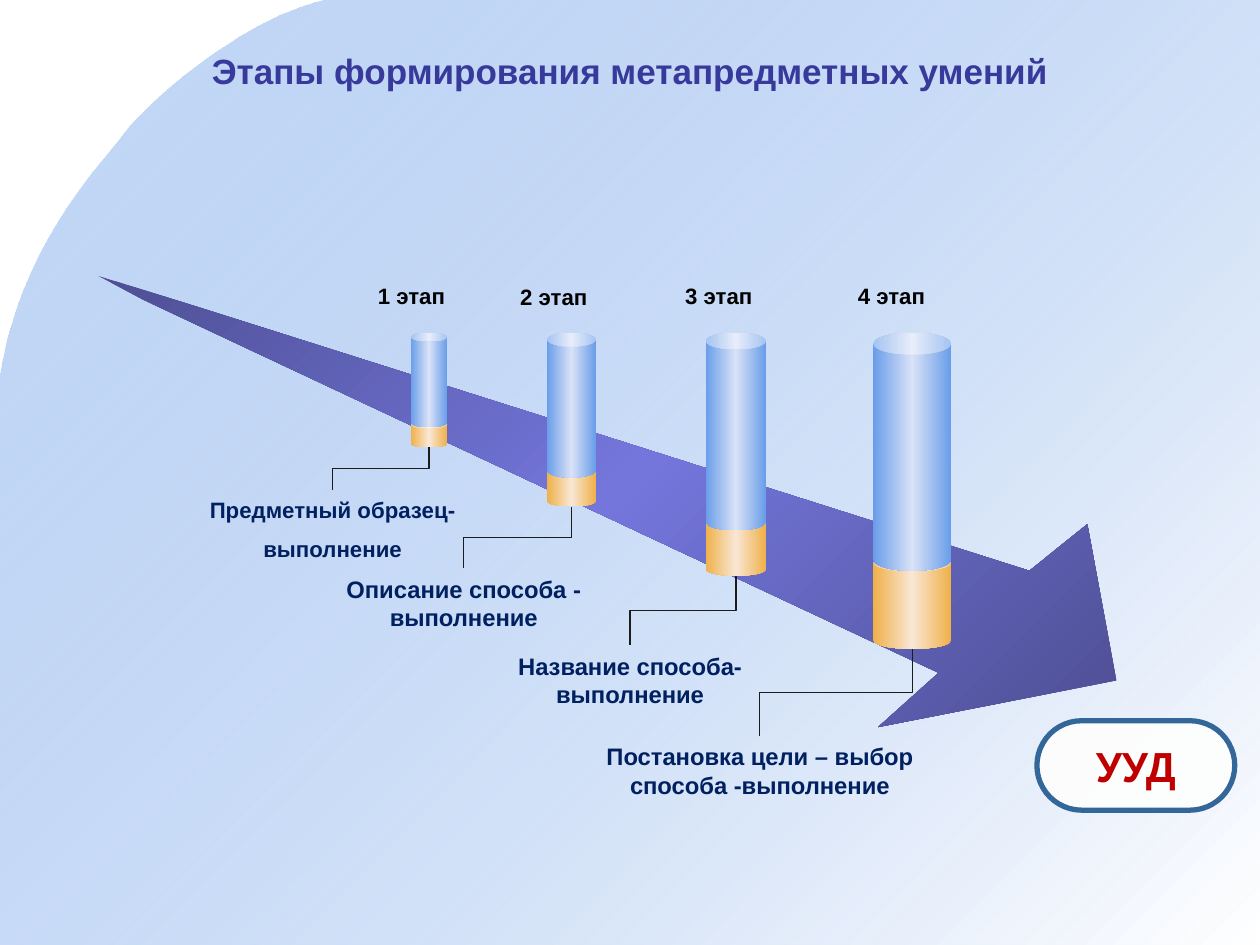
"""Build the slide on the stages of forming meta-subject skills."""
from pptx import Presentation
from pptx import util as u
from pptx.dml import color
from pptx.enum import shapes, text
from pptx.oxml import parse_xml
from pptx.oxml import ns

TITLE = "Этапы формирования метапредметных умений"
RESULT = "УУД"
STAGES = [
    dict(label="1 этап", label_at=(2.9, 2.19), left=3.26, width=0.29,
         blue=(2.64, 0.75, 0.239), orange=(3.34, 0.21, 0.273),
         caption=["Предметный образец-", "выполнение"],
         caption_at=(1.3, 3.89), height=0.64, size=12.7),
    dict(label="2 этап", label_at=(4.03, 2.2), left=4.34, width=0.39,
         blue=(2.64, 1.15, 0.282), orange=(3.68, 0.34, 0.25),
         caption=["Описание способа - выполнение"],
         caption_at=(2.34, 4.51), height=0.56, size=13.6),
    dict(label="3 этап", label_at=(5.34, 2.19), left=5.6, width=0.48,
         blue=(2.64, 1.57, 0.276), orange=(4.1, 0.47, 0.217),
         caption=["Название способа- выполнение"],
         caption_at=(3.66, 5.12), height=0.56, size=13.6),
    dict(label="4 этап", label_at=(6.71, 2.19), left=6.93, width=0.62,
         blue=(2.64, 1.89, 0.28), orange=(4.4, 0.75, 0.214),
         caption=["Постановка цели – выбор способа -выполнение"],
         caption_at=(4.69, 5.84), height=0.79, size=13.6),
]
CAPTION_WIDTH = 2.68
CURVES = [
    [(2.58, 0), (1.9, 0.16), (1.16, 0.83), (0.98, 1.07)],
    [(0.98, 1.07), (0.8, 1.32), (0.16, 1.94), (0, 3.01)],
]
CORNERS = [(0, 7.5), (10, 7.5), (10, 0)]
ARROW = [(0.78, 2.19), (1.14, 2.38), (7.45, 5.34), (6.97, 5.77),
         (8.86, 5.4), (8.63, 4.16), (8.17, 4.53), (1.55, 2.43)]
BACKDROP_STOPS = [(0, "699DE9", 39), (100, "FFFFFF", 100)]
ARROW_STOPS = [(0, "4E4F94", 100), (50, "7476DC", 100), (100, "4E4F94", 100)]
CAN_STOPS = {
    "orange": [(0, "EFB049", 100), (50, "F9E7D5", 100), (100, "EFB049", 100)],
    "blue": [(0, "699DE9", 100), (50, "D9E2F7", 100), (100, "699DE9", 100)],
}


def rgb(value):
    return color.RGBColor.from_string(value)


def color_xml(value, alpha):
    return f'<a:srgbClr val="{value}"><a:alpha val="{alpha * 1000}"/></a:srgbClr>'


def paint(shape, stops, angle=0):
    if len(stops) == 1:
        tag, body = "solidFill", color_xml(*stops[0][1:])
    else:
        marks = "".join(f'<a:gs pos="{position * 1000}">{color_xml(value, alpha)}</a:gs>'
                        for position, value, alpha in stops)
        tag = "gradFill"
        body = f'<a:gsLst>{marks}</a:gsLst><a:lin ang="{angle * 60000}" scaled="0"/>'
    shape.element.spPr.insert(2, parse_xml(f'<a:{tag} {ns.nsdecls("a")}>{body}</a:{tag}>'))
    shape.line.fill.background()
    shape.shadow.inherit = False


def write(shape, lines, size, hue, align="LEFT", anchor="TOP", wrap=True):
    frame = shape.text_frame
    frame_format = dict(word_wrap=wrap, vertical_anchor=getattr(text.MSO_ANCHOR, anchor),
                        margin_left=u.Inches(0.1), margin_right=u.Inches(0.1),
                        margin_top=u.Inches(0.05), margin_bottom=u.Inches(0.05))
    for name, value in frame_format.items():
        setattr(frame, name, value)
    for index, line in enumerate(lines):
        paragraph = frame.add_paragraph() if index else frame.paragraphs[0]
        paragraph.text = line
        paragraph.alignment = getattr(text.PP_ALIGN, align)
        if index:
            paragraph.space_before = u.Pt(7)
        for name, value in dict(name="Arial", size=u.Pt(size), bold=True).items():
            setattr(paragraph.font, name, value)
        paragraph.font.color.rgb = rgb(hue)


def add_text(slide, box, *args, **options):
    write(slide.shapes.add_textbox(*map(u.Inches, box)), *args, **options)


def add_outline(slide, points, stops):
    vertices = [(u.Inches(x), u.Inches(y)) for x, y in points]
    builder = slide.shapes.build_freeform(*vertices[0])
    builder.add_line_segments(vertices[1:], close=True)
    paint(builder.convert_to_shape(), stops, 45)


def curve_points(controls, steps=24):
    for step in range(steps + 1):
        t = step / steps
        weights = ((1 - t) ** 3, 3 * t * (1 - t) ** 2, 3 * t * t * (1 - t), t ** 3)
        yield tuple(sum(w * point[axis] for w, point in zip(weights, controls))
                    for axis in (0, 1))


def add_can(slide, stage, part):
    top, height, bend = stage[part]
    can = slide.shapes.add_shape(shapes.MSO_SHAPE.CAN, *map(
        u.Inches, (stage["left"], top, stage["width"], height)))
    can.adjustments[0] = bend
    paint(can, CAN_STOPS[part])


def add_leader(slide, stage):
    start_x = stage["left"] + stage["width"] / 2
    start_y = sum(stage["orange"][:2])
    end_x, end_y = stage["caption_at"][0] + CAPTION_WIDTH / 2, stage["caption_at"][1]
    drop, span = end_y - start_y, start_x - end_x
    left = (start_x + end_x - drop) / 2
    top = (start_y + end_y - span) / 2
    leader = slide.shapes.add_connector(shapes.MSO_CONNECTOR.ELBOW, *map(
        u.Inches, (left, top, left + drop, top + span)))
    leader.line.color.rgb = rgb("1C1C1C")
    leader.line.width = u.Pt(0.75)
    properties = leader.element.spPr
    properties.find(ns.qn("a:xfrm")).set("rot", "5400000")
    properties.append(parse_xml(f'<a:effectLst {ns.nsdecls("a")}/>'))


def main():
    presentation = Presentation()
    presentation.slide_width, presentation.slide_height = u.Inches(10), u.Inches(7.5)
    slide = presentation.slides.add_slide(presentation.slide_layouts[6])

    edge = [point for controls in CURVES for point in curve_points(controls)]
    add_outline(slide, edge + CORNERS, BACKDROP_STOPS)
    add_text(slide, (0.5, 0.25, 9, 0.62), [TITLE], 20, "37399B", "CENTER", "MIDDLE")
    add_outline(slide, ARROW, ARROW_STOPS)

    for stage in STAGES:
        add_can(slide, stage, "orange")
        add_text(slide, (*stage["label_at"], 1.34, 0.31), [stage["label"]], 12.7, "000000")
        add_text(slide, (*stage["caption_at"], CAPTION_WIDTH, stage["height"]),
                 stage["caption"], stage["size"], "002060", "CENTER")
    for stage in STAGES:
        add_leader(slide, stage)
        add_can(slide, stage, "blue")

    badge = slide.shapes.add_shape(shapes.MSO_SHAPE.ROUNDED_RECTANGLE, *map(
        u.Inches, (8.23, 5.72, 1.57, 0.71)))
    badge.adjustments[0] = 0.5
    paint(badge, [(0, "FEFEFE", 92)])
    badge.line.color.rgb = rgb("336699")
    badge.line.width = u.Pt(3)
    write(badge, [RESULT], 24, "C00000", "CENTER", "MIDDLE", wrap=False)

    presentation.save("out.pptx")


if __name__ == "__main__":
    main()
